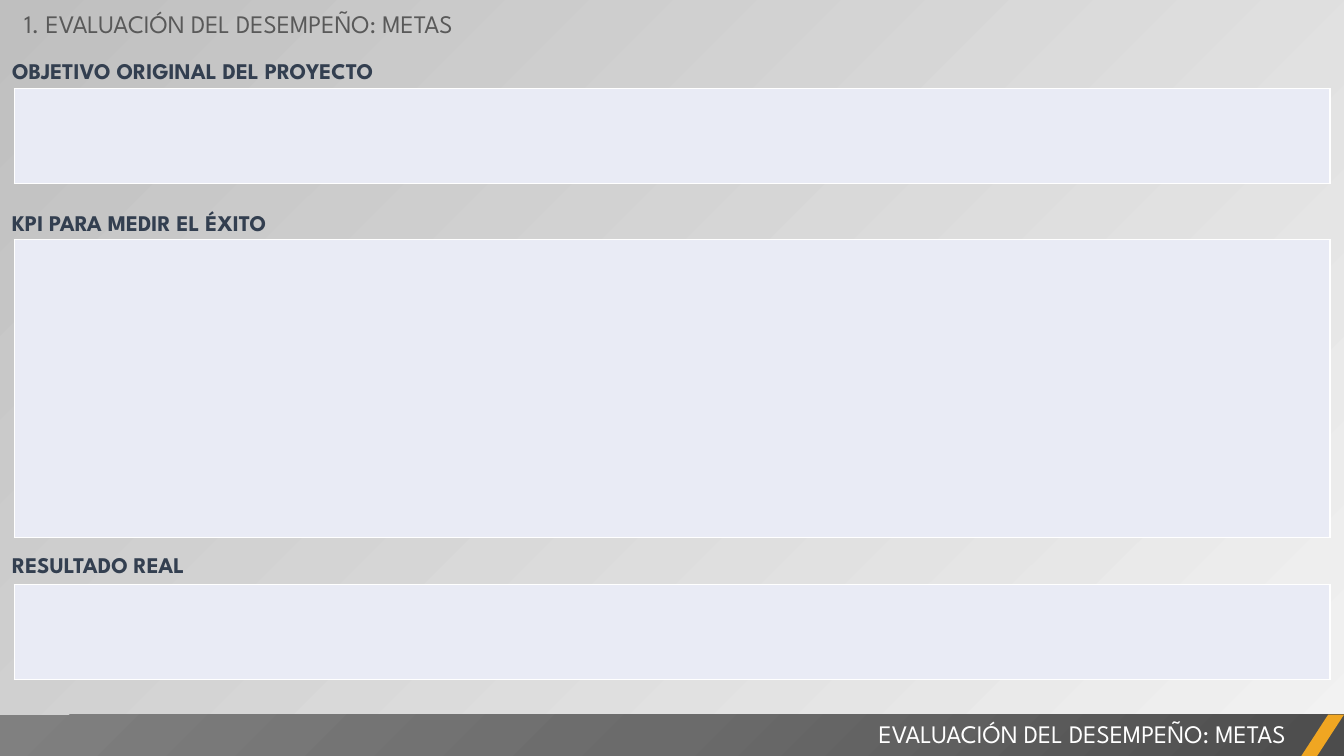
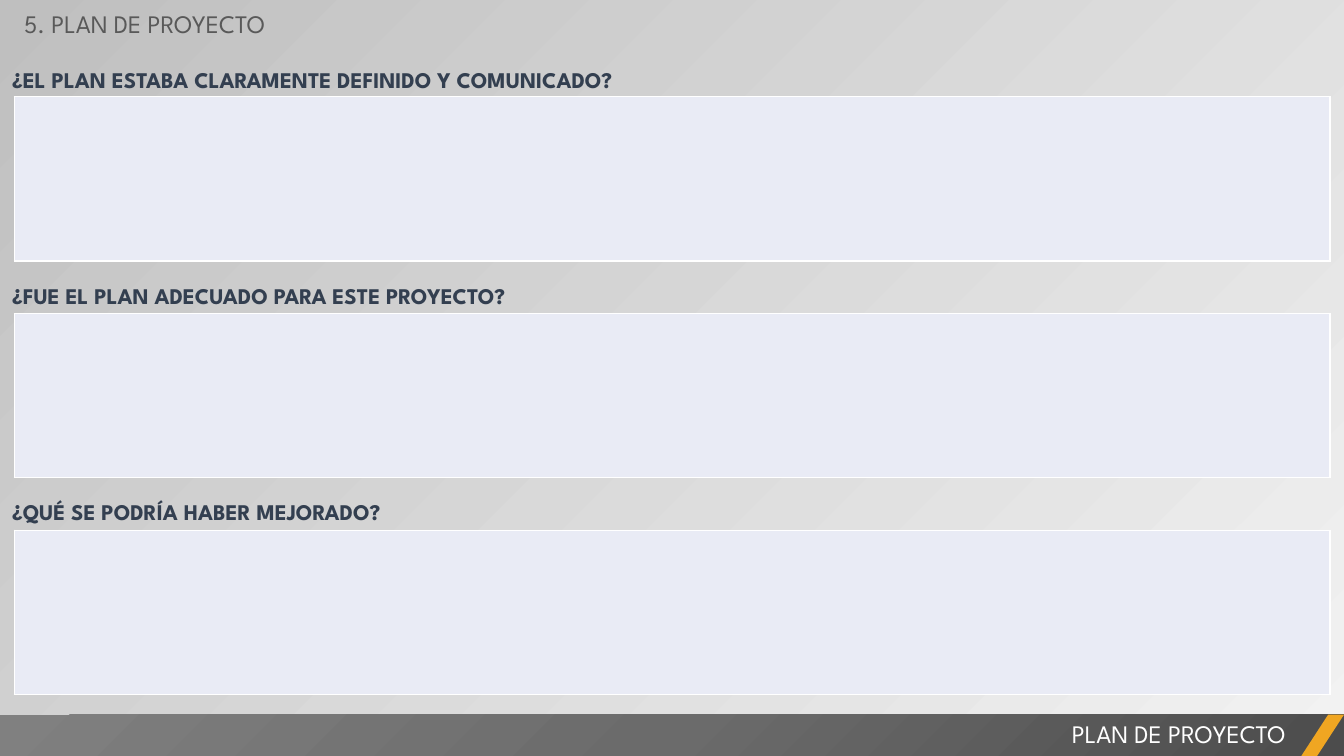
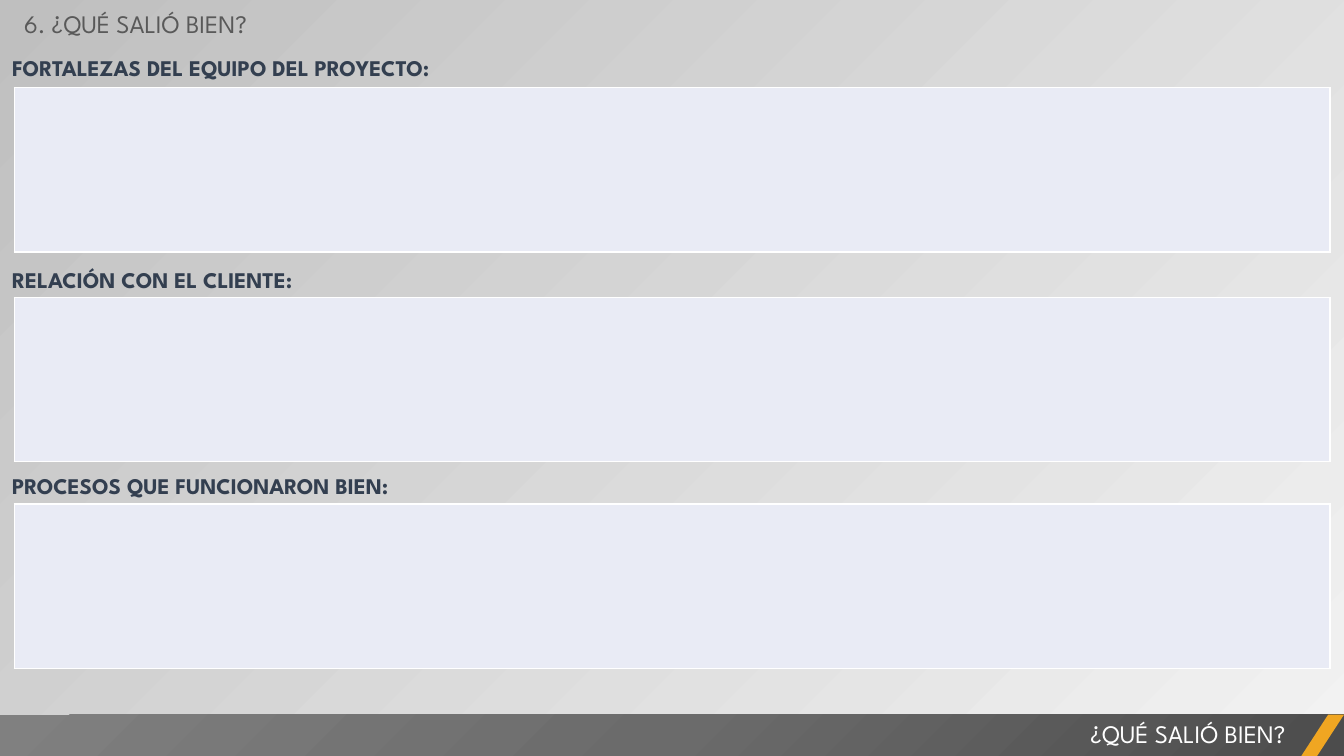
from pptx import Presentation
from pptx import util as u
from pptx.dml.color import RGBColor
from pptx.enum import shapes, text
from pptx.oxml import parse_xml
from pptx.oxml.ns import nsdecls, qn

PX = 9144  # EMU; 100 px to the inch
WIDE, HIGH = 1333, 750
FONT = "League Spartan"
NAVY = RGBColor(0x33, 0x3F, 0x50)
GREY = RGBColor(0x59, 0x59, 0x59)
WHITE = RGBColor(0xFF, 0xFF, 0xFF)
PALE = RGBColor(0xE9, 0xEB, 0xF5)
GOLD = RGBColor(0xF0, 0xA6, 0x22)
LIGHT = RGBColor(0xF2, 0xF2, 0xF2)
SILVER = RGBColor(0xBF, 0xBF, 0xBF)
DARK = RGBColor(0x4C, 0x4C, 0x4C)
MID = RGBColor(0x6B, 0x6B, 0x6B)
STEEL = RGBColor(0x80, 0x80, 0x80)

DIAGONAL = '<a:lin ang="13500000" scaled="0"/>'
CORNER = '<a:path path="circle"><a:fillToRect l="100000" t="100000"/></a:path>'
TIGHT = u.Pt(21.5)
LOOSE = 1.2

# Each field: label, label top, label width, line spacing, box top, box height
SLIDES = [
    ("1. ", "EVALUACIÓN DEL DESEMPEÑO: METAS", [
        ("OBJETIVO ORIGINAL DEL PROYECTO", 48, 989, TIGHT, 88, 94),
        ("KPI PARA MEDIR EL ÉXITO", 198, 867, TIGHT, 238, 295),
        ("RESULTADO REAL", 538, 798, TIGHT, 580, 94),
    ]),
    ("5. ", "PLAN DE PROYECTO", [
        ("¿EL PLAN ESTABA CLARAMENTE DEFINIDO Y COMUNICADO?", 56, 1133, TIGHT, 96, 163),
        ("¿FUE EL PLAN ADECUADO PARA ESTE PROYECTO?", 271, 1133, TIGHT, 311, 163),
        ("¿QUÉ SE PODRÍA HABER MEJORADO?", 483, 1133, LOOSE, 526, 163),
    ]),
    ("6. ", "¿QUÉ SALIÓ BIEN?", [
        ("FORTALEZAS DEL EQUIPO DEL PROYECTO:", 45, 1244, TIGHT, 87, 163),
        ("RELACIÓN CON EL CLIENTE:", 255, 1244, TIGHT, 295, 163),
        ("PROCESOS QUE FUNCIONARON BIEN:", 457, 1244, LOOSE, 500, 163),
    ]),
]


def emu(*box):
    return [n * PX for n in box]


def blend(host, stops, course):
    """Turn the solid fill inside an element into a gradient."""
    marks = "".join(
        f'<a:gs pos="{at * 1000}"><a:srgbClr val="{hue}">'
        f'<a:alpha val="{alpha * 1000}"/></a:srgbClr></a:gs>'
        for at, hue, alpha in stops)
    grad = parse_xml(f'<a:gradFill {nsdecls("a")} rotWithShape="1">'
                     f'<a:gsLst>{marks}</a:gsLst>{course}</a:gradFill>')
    host.replace(host.find(qn("a:solidFill")), grad)


def write(slide, box, words, size, color, bold=False, **margins):
    area = slide.shapes.add_textbox(*emu(*box))
    frame = area.text_frame
    frame.word_wrap = True
    frame.auto_size = text.MSO_AUTO_SIZE.SHAPE_TO_FIT_TEXT
    for side, size_px in margins.items():
        setattr(frame, "margin_" + side, size_px * PX)
    para = frame.paragraphs[0]
    run = para.add_run()
    run.text = words
    for name, value in dict(name=FONT, size=u.Pt(size), bold=bold).items():
        setattr(run.font, name, value)
    run.font.color.rgb = color
    return para


def block(slide, kind, box, color):
    shape = slide.shapes.add_shape(kind, *emu(*box))
    shape.shadow.inherit = False
    shape.fill.solid()
    shape.fill.fore_color.rgb = color
    shape.line.fill.background()
    return shape


def label(slide, box, words, spacing):
    para = write(slide, box, words, 16, NAVY, True,
                 left=12, right=12, top=6, bottom=6)
    para.line_spacing = spacing
    para._p.get_or_add_pPr().append(parse_xml(
        f'<a:spcBef {nsdecls("a")}><a:spcPct val="20000"/></a:spcBef>'))


def entry(slide, box):
    """An empty one-cell table to be filled in."""
    table = slide.shapes.add_table(1, 1, *emu(*box)).table
    table.first_row = table.horz_banding = False
    cell = table.cell(0, 0)
    rim = cell._tc.get_or_add_tcPr()
    for side in "LRTB":
        rim.append(parse_xml(
            f'<a:ln{side} {nsdecls("a")} w="12700"><a:solidFill>'
            f'<a:srgbClr val="{WHITE}"/></a:solidFill></a:ln{side}>'))
    cell.fill.solid()
    cell.fill.fore_color.rgb = PALE


def footer(slide, top, words):
    kinds = shapes.MSO_SHAPE
    bar = block(slide, kinds.RECTANGLE, (0, top, WIDE, 42), DARK)
    blend(bar._element.spPr,
          [(0, DARK, 100), (50, MID, 100), (100, STEEL, 100)], CORNER)
    para = write(slide, (525, top - 1, 760, 40), words, 18, WHITE)
    para.alignment = text.PP_ALIGN.RIGHT
    slash = block(slide, kinds.PARALLELOGRAM, (WIDE - 43, top, 43, 42), GOLD)
    slash.adjustments[0] = 0.65


def backdrop(slide):
    fill = slide.background.fill
    fill.solid()
    fill.fore_color.rgb = LIGHT
    blend(slide.element.find(".//" + qn("p:bgPr")),
          [(0, LIGHT, 40), (100, SILVER, 100)], DIAGONAL)


def form(deck, number, topic, fields):
    slide = deck.slides.add_slide(deck.slide_layouts[6])
    backdrop(slide)
    for words, top, width, spacing, start, height in fields:
        entry(slide, (14, start, 1305, height))
        label(slide, (0, top, width, 40), words, spacing)
    write(slide, (14, 3, 531, 40), number + topic, 18, GREY)
    footer(slide, 709, topic)


def main():
    deck = Presentation()
    deck.slide_width, deck.slide_height = emu(WIDE, HIGH)
    for number, topic, fields in SLIDES:
        form(deck, number, topic, fields)
    deck.save("out.pptx")


if __name__ == "__main__":
    main()
